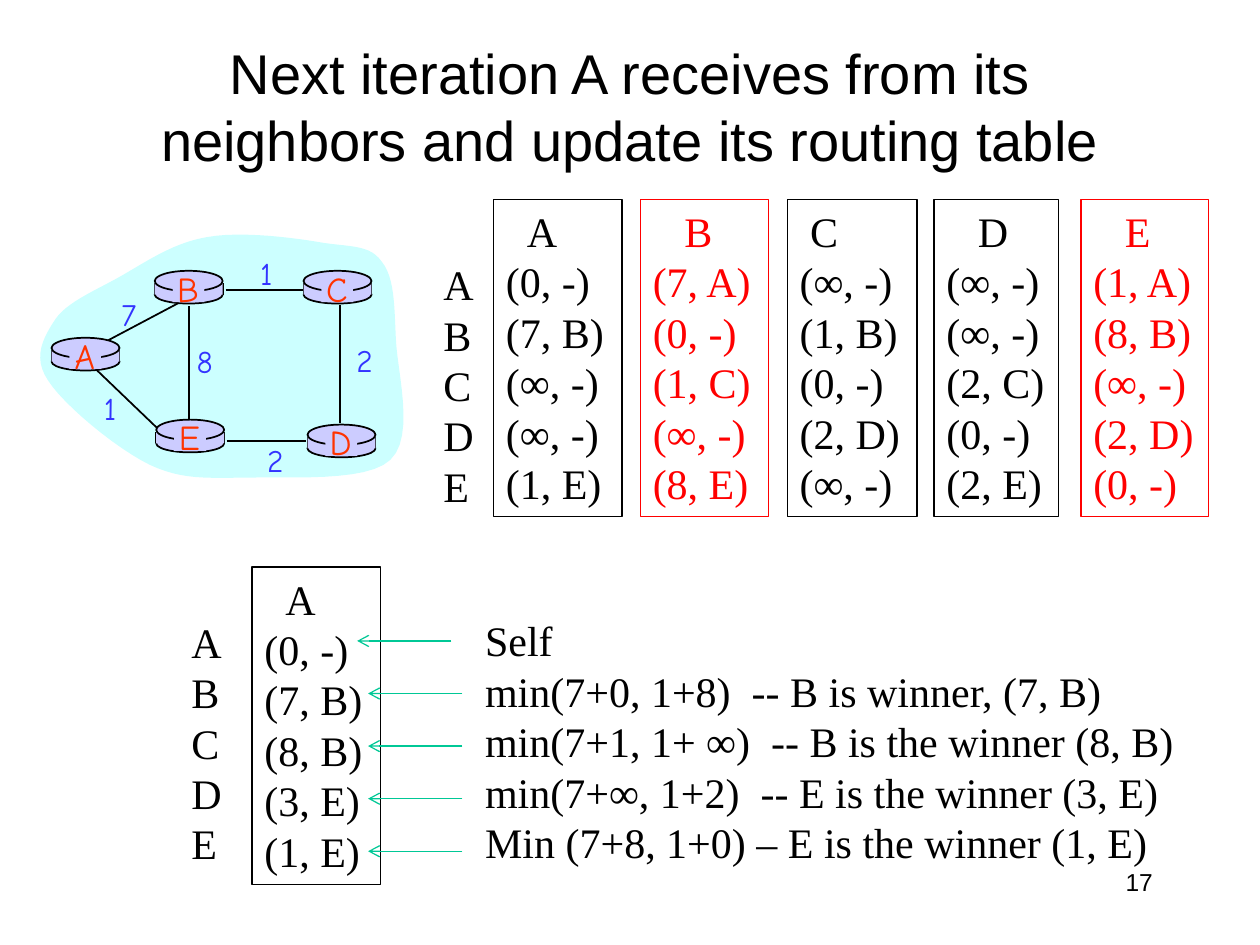
import pptx
import pptx.dml.color
import pptx.enum.shapes
import pptx.enum.text
import pptx.oxml
import pptx.oxml.ns
import pptx.util
from pptx.util import Cm

ALIGN = pptx.enum.text.PP_ALIGN
ANCHOR = pptx.enum.text.MSO_ANCHOR
SHAPE = pptx.enum.shapes.MSO_SHAPE
BLACK, RED, GREEN = "000000", "FF0000", "00C896"
CLOUD, ROUTER, NAME, WEIGHT = "CCFFFF", "CCCCFF", "FF3300", "3333FF"
SERIF, SANS, COMIC = "Times New Roman", "Arial", "Comic Neue"
NODES = "ABCDE"


def color(hex_text):
    return pptx.dml.color.RGBColor.from_string(hex_text)


def curve_points(start, curves, steps=12):
    """Sample a chain of cubic Bezier curves into points."""
    points = [start]
    for first, second, end in curves:
        for step in range(1, steps + 1):
            t = step / steps
            u = 1 - t
            points.append(tuple(
                u**3 * a + 3 * u * u * t * b + 3 * u * t * t * c + t**3 * d
                for a, b, c, d in zip(start, first, second, end)))
        start = end
    return points


class SlideBuilder:
    """Holds the current slide and its style; all positions are in centimetres."""

    def __init__(self, slide):
        self.slide = slide
        self.shapes = slide.shapes

    def paint(self, shape, fill, line, width=1):
        shape.shadow.inherit = False
        if fill:
            shape.fill.solid()
            shape.fill.fore_color.rgb = color(fill)
        else:
            shape.fill.background()
        if line:
            shape.line.color.rgb = color(line)
            shape.line.width = pptx.util.Pt(width)
        else:
            shape.line.fill.background()

    def shape(self, kind, box, fill=None, line=None, width=1):
        shape = self.shapes.add_shape(kind, *map(Cm, box))
        self.paint(shape, fill, line, width)
        return shape

    def set_lines(self, shape, lines, size=24, font=SERIF, ink=BLACK,
                  align=ALIGN.LEFT, anchor=ANCHOR.TOP, wrap=False):
        frame = shape.text_frame
        frame.word_wrap = wrap
        frame.vertical_anchor = anchor
        for index, text in enumerate(lines):
            paragraph = frame.add_paragraph() if index else frame.paragraphs[0]
            paragraph.text = text
            paragraph.alignment = align
            paragraph.line_spacing = pptx.util.Pt(1.2 * size)
            paragraph.font.size = pptx.util.Pt(size)
            paragraph.font.name = font
            paragraph.font.color.rgb = color(ink)

    def text(self, box, lines, **style):
        self.set_lines(self.shapes.add_textbox(*map(Cm, box)), lines, **style)

    def line(self, start, end, ink=BLACK, width=1, arrow=False):
        connector = self.shapes.add_connector(
            pptx.enum.shapes.MSO_CONNECTOR.STRAIGHT, *map(Cm, start + end))
        connector.line.color.rgb = color(ink)
        connector.line.width = pptx.util.Pt(width)
        if arrow:
            connector.line._get_or_add_ln().append(pptx.oxml.parse_xml(
                f'<a:tailEnd {pptx.oxml.ns.nsdecls("a")} type="arrow"/>'))
        connector._element.spPr.append(pptx.oxml.parse_xml(
            f'<a:effectLst {pptx.oxml.ns.nsdecls("a")}/>'))

    def outline(self, points, fill):
        start, *rest = [(Cm(x), Cm(y)) for x, y in points]
        builder = self.shapes.build_freeform(*start)
        builder.add_line_segments(rest, close=True)
        self.paint(builder.convert_to_shape(), fill, None)

    def router(self, name, x, y):
        """Draw a flat cylinder with its node name on top."""
        self.shape(SHAPE.OVAL, (x, y + 0.3, 1.37, 0.36), ROUTER, BLACK)
        for side in (x, x + 1.37):
            self.line((side, y + 0.25), (side, y + 0.48))
        self.shape(SHAPE.RECTANGLE, (x, y + 0.25, 1.37, 0.23), ROUTER)
        self.shape(SHAPE.OVAL, (x, y, 1.37, 0.41), ROUTER, BLACK)
        self.shape(SHAPE.RECTANGLE, (x + 0.36, y + 0.05, 0.64, 0.58), ROUTER)
        self.text((x + 0.17, y - 0.2, 1, 1.09), [name], size=20, font=COMIC,
                  ink=NAME, align=ALIGN.CENTER)

    def routing_column(self, left, top, width, name, indent, entries, ink=BLACK):
        """Draw one node's framed distance vector, its name indented in points."""
        frame = self.shape(SHAPE.RECTANGLE, (left, top, width, 6.4), None, ink, 0.75)
        self.set_lines(frame, [name, *entries], ink=ink)
        heading = frame.text_frame.paragraphs[0]
        heading._p.get_or_add_pPr().set("marL", str(pptx.util.Pt(indent)))

    def row_names(self, left, top):
        self.text((left, top, 1.17, 6.4), NODES, anchor=ANCHOR.BOTTOM)


CLOUD_START = (1.12, 6.43)
CLOUD_CURVES = [
    ((1.35, 6.1), (1.85, 5.89), (2.36, 5.61)),
    ((2.87, 5.33), (3.45, 4.9), (4.17, 4.78)),
    ((4.88, 4.65), (5.97, 4.8), (6.55, 4.9)),
    ((7.14, 4.98), (7.47, 4.95), (7.7, 5.28)),
    ((7.95, 5.59), (7.95, 6.15), (7.98, 6.81)),
    ((8, 7.47), (8.38, 8.79), (7.87, 9.27)),
    ((7.39, 9.73), (5.79, 9.6), (4.98, 9.63)),
    ((4.17, 9.63), (3.68, 9.68), (3.02, 9.37)),
    ((2.34, 9.04), (1.27, 8.15), (0.97, 7.67)),
    ((0.64, 7.19), (0.89, 6.78), CLOUD_START),
]
ROUTERS = {"A": (1.04, 6.81), "B": (3.12, 5.46), "C": (6.12, 5.46),
           "D": (6.2, 8.56), "E": (3.15, 8.46)}
# Start, end, weight, and the top centre of the weight's label
LINKS = [
    ((2.18, 6.86), (3.71, 6.05), "7", (2.6, 5.82)),
    ((3.81, 6.17), (3.81, 8.53), "8", (4.13, 6.78)),
    ((1.96, 7.47), (3.18, 8.64), "1", (2.22, 7.72)),
    ((4.57, 8.89), (6.17, 8.89), "2", (5.55, 8.76)),
    ((4.55, 5.84), (6.15, 5.84), "1", (5.37, 5)),
    ((6.86, 6.15), (6.86, 8.53), "2", (7.35, 6.76)),
]
# Width, name indent, colour and entries of each node's column
COLUMNS = [
    (2.59, 12, BLACK, ["(0, -)", "(7, B)", "(∞, -)", "(∞, -)", "(1, E)"]),
    (2.59, 18, RED, ["(7, A)", "(0, -)", "(1, C)", "(∞, -)", "(8, E)"]),
    (2.62, 6, BLACK, ["(∞, -)", "(1, B)", "(0, -)", "(2, D)", "(∞, -)"]),
    (2.51, 18, BLACK, ["(∞, -)", "(∞, -)", "(2, C)", "(0, -)", "(2, E)"]),
    (2.57, 18, RED, ["(1, A)", "(8, B)", "(∞, -)", "(2, D)", "(0, -)"]),
]
UPDATED = ["(0, -)", "(7, B)", "(8, B)", "(3, E)", "(1, E)"]
REASONS = [
    "Self",
    "min(7+0, 1+8)  -- B is winner, (7, B)",
    "min(7+1, 1+ ∞)  -- B is the winner (8, B)",
    "min(7+∞, 1+2)  -- E is the winner (3, E)",
    "Min (7+8, 1+0) – E is the winner (1, E)",
]


def main():
    presentation = pptx.Presentation()
    presentation.slide_width, presentation.slide_height = Cm(25.4), Cm(19.05)
    builder = SlideBuilder(presentation.slides.add_slide(presentation.slide_layouts[6]))

    builder.text((18.21, 17.35, 5.28, 1.27), ["17"], size=14, font=SANS,
                 align=ALIGN.RIGHT, wrap=True)
    builder.text((1.91, 1.07, 21.59, 2.11),
                 ["Next iteration A receives from its neighbors and update its routing table"],
                 size=32, font=SANS, align=ALIGN.CENTER, anchor=ANCHOR.MIDDLE, wrap=True)

    builder.outline(curve_points(CLOUD_START, CLOUD_CURVES), CLOUD)
    for start, end, *_ in LINKS:
        builder.line(start, end)
    for name, (x, y) in ROUTERS.items():
        builder.router(name, x, y)
    for *_, weight, (x, y) in LINKS:
        builder.text((x - 0.45, y, 0.9, 1.02), [weight], size=18, font=COMIC,
                     ink=WEIGHT, align=ALIGN.CENTER)

    builder.row_names(8.69, 4.02)
    for index, (width, indent, ink, entries) in enumerate(COLUMNS):
        builder.routing_column(9.95 + 2.96 * index, 4.02, width, NODES[index],
                               indent, entries, ink)

    builder.row_names(3.61, 11.23)
    builder.routing_column(5.08, 11.43, 2.59, "A", 12, UPDATED)
    builder.text((9.53, 12.27, 14.53, 5.38), REASONS)
    for index in range(len(REASONS)):
        left = 7.42 if index else 7.2
        y = 12.92 + 1.06 * index
        builder.line((left + 1.9, y), (left, y), GREEN, 0.75, arrow=True)

    presentation.save("out.pptx")


if __name__ == "__main__":
    main()
